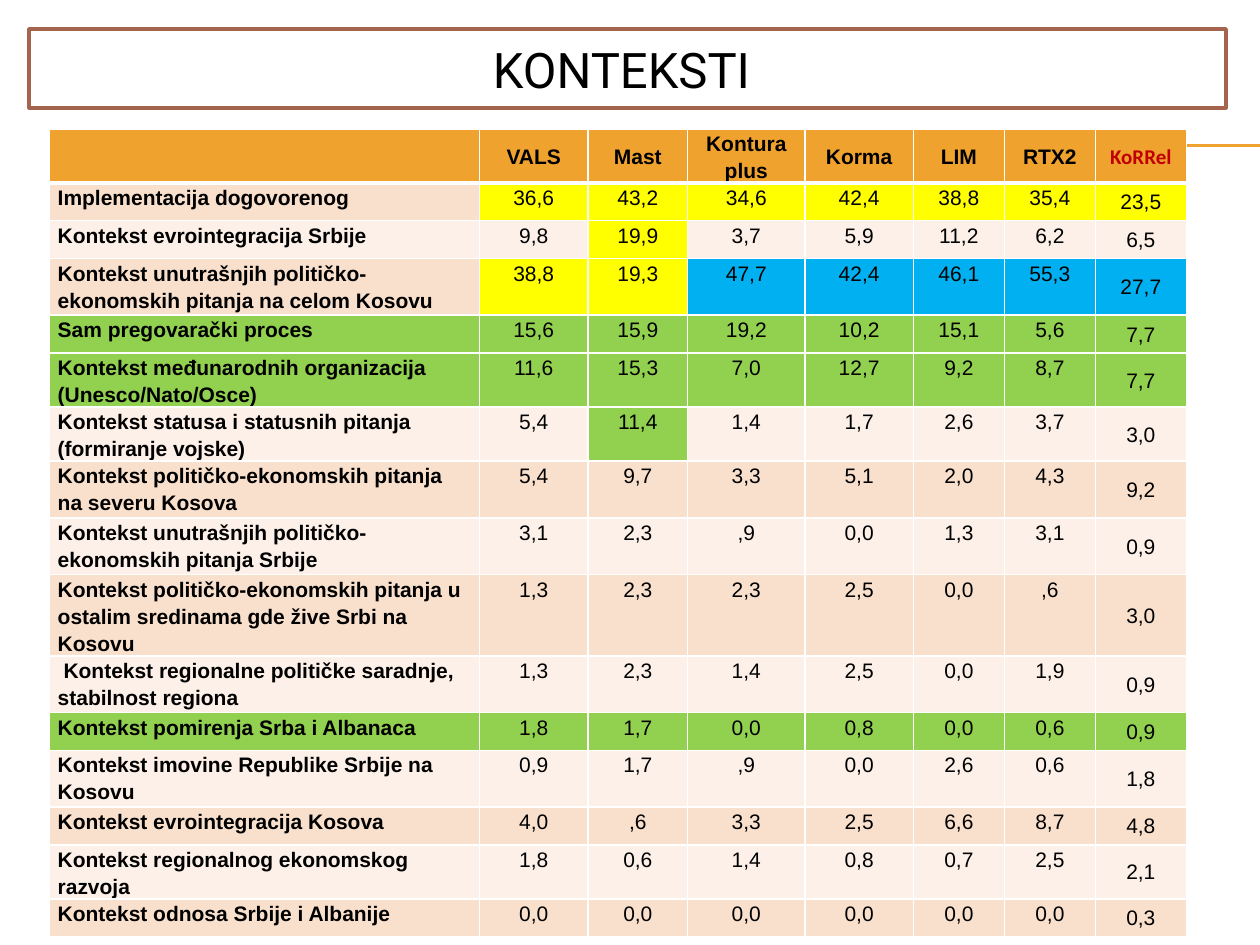
import lxml.etree
import pptx
import pptx.dml.color
import pptx.enum.shapes
import pptx.enum.text
import pptx.oxml.ns
import pptx.util

Pt = pptx.util.Pt
RGB = pptx.dml.color.RGBColor
PP_ALIGN = pptx.enum.text.PP_ALIGN
ANCHOR = pptx.enum.text.MSO_ANCHOR
qn = pptx.oxml.ns.qn

BLACK = RGB(0x00, 0x00, 0x00)
WHITE = RGB(0xFF, 0xFF, 0xFF)
ORANGE = RGB(0xF0, 0xA2, 0x2E)
BROWN = RGB(0xA5, 0x64, 0x4E)
RED = RGB(0xC0, 0x00, 0x00)
BAND_DARK = RGB(0xF9, 0xE0, 0xCD)
BAND_LIGHT = RGB(0xFC, 0xF0, 0xE8)
HIGHLIGHTS = {
    "Y": RGB(0xFF, 0xFF, 0x00),
    "B": RGB(0x00, 0xB0, 0xF0),
    "G": RGB(0x92, 0xD0, 0x50),
}

# Row heights by how the label wraps
ONE, TIGHT, TWO, THREE = 21.6, 30.8, 32.4, 46.2
HEAD = 30.3
COLUMNS = [246, 62, 57, 67, 62, 52, 52, 52]
MEDIA = ["VALS", "Mast", "Kontura plus", "Korma", "LIM", "RTX2", "KoRRel"]

# Label, values, height, highlight of each cell ("." is the plain band)
CONTEXTS = [
    ("Implementacija dogovorenog",
     "36,6 43,2 34,6 42,4 38,8 35,4 23,5", ONE, ".YYYYYYY"),
    ("Kontekst evrointegracija Srbije",
     "9,8 19,9 3,7 5,9 11,2 6,2 6,5", ONE, "..Y....."),
    ("Kontekst unutrašnjih političko-ekonomskih pitanja na celom Kosovu",
     "38,8 19,3 47,7 42,4 46,1 55,3 27,7", TWO, ".YYBBBBB"),
    ("Sam pregovarački proces",
     "15,6 15,9 19,2 10,2 15,1 5,6 7,7", ONE, "GGGGGGGG"),
    ("Kontekst međunarodnih organizacija (Unesco/Nato/Osce)",
     "11,6 15,3 7,0 12,7 9,2 8,7 7,7", TIGHT, "GGGGGGGG"),
    ("Kontekst statusa i statusnih pitanja (formiranje vojske)",
     "5,4 11,4 1,4 1,7 2,6 3,7 3,0", TIGHT, "..G....."),
    ("Kontekst političko-ekonomskih pitanja na severu Kosova",
     "5,4 9,7 3,3 5,1 2,0 4,3 9,2", TWO, "........"),
    ("Kontekst unutrašnjih političko-ekonomskih pitanja Srbije",
     "3,1 2,3 ,9 0,0 1,3 3,1 0,9", TWO, "........"),
    ("Kontekst političko-ekonomskih pitanja u ostalim sredinama gde žive "
     "Srbi na Kosovu",
     "1,3 2,3 2,3 2,5 0,0 ,6 3,0", THREE, "........"),
    (" Kontekst regionalne političke saradnje, stabilnost regiona",
     "1,3 2,3 1,4 2,5 0,0 1,9 0,9", TWO, "........"),
    ("Kontekst pomirenja Srba i Albanaca",
     "1,8 1,7 0,0 0,8 0,0 0,6 0,9", ONE, "GGGGGGGG"),
    ("Kontekst imovine Republike Srbije na Kosovu",
     "0,9 1,7 ,9 0,0 2,6 0,6 1,8", TWO, "........"),
    ("Kontekst evrointegracija Kosova",
     "4,0 ,6 3,3 2,5 6,6 8,7 4,8", ONE, "........"),
    ("Kontekst regionalnog ekonomskog razvoja",
     "1,8 0,6 1,4 0,8 0,7 2,5 2,1", TIGHT, "........"),
    ("Kontekst odnosa Srbije i Albanije",
     "0,0 0,0 0,0 0,0 0,0 0,0 0,3", ONE, "........"),
]


class Deck:
    """Holds the text style and the current slide."""

    font = "Arial"
    size = 12

    def __init__(self, width, height):
        self.prs = pptx.Presentation()
        self.prs.slide_width, self.prs.slide_height = Pt(width), Pt(height)
        self.s = self.prs.slides.add_slide(self.prs.slide_layouts[6])

    def run(self, p, text, font=None, size=None, color=BLACK, bold=False):
        r = p.add_run()
        r.text = text
        r.font.name = font or self.font
        r.font.size = Pt(size or self.size)
        r.font.bold = bold
        r.font.color.rgb = color

    def line(self, x1, y1, x2, y2, color, width):
        c = self.s.shapes.add_connector(
            pptx.enum.shapes.MSO_CONNECTOR.STRAIGHT,
            Pt(x1), Pt(y1), Pt(x2), Pt(y2))
        c.line.color.rgb = color
        c.line.width = Pt(width)
        lxml.etree.SubElement(c._element.spPr, qn("a:effectLst"))

    def title_box(self, x, y, w, h, text):
        sp = self.s.shapes.add_shape(
            pptx.enum.shapes.MSO_SHAPE.RECTANGLE, Pt(x), Pt(y), Pt(w), Pt(h))
        sp.shadow.inherit = False
        sp.fill.solid()
        sp.fill.fore_color.rgb = WHITE
        sp.line.color.rgb = BROWN
        sp.line.width = Pt(2)
        tf = sp.text_frame
        tf.word_wrap = True
        tf.vertical_anchor = ANCHOR.MIDDLE
        p = tf.paragraphs[0]
        p.alignment = PP_ALIGN.CENTER
        self.run(p, text, "Roboto", 28)

    def table(self, x, y, widths, heights):
        t = self.s.shapes.add_table(
            len(heights), len(widths), Pt(x), Pt(y),
            Pt(sum(widths)), Pt(sum(heights))).table
        for col, w in zip(t.columns, widths):
            col.width = Pt(w)
        for row, h in zip(t.rows, heights):
            row.height = Pt(h)
        return t

    def borders(self, cell, bottom):
        tcPr = cell._tc.get_or_add_tcPr()
        sides = [("L", 1), ("R", 1), ("T", 1), ("B", bottom)]
        for i, (side, width) in enumerate(sides):
            ln = lxml.etree.Element(qn("a:ln" + side), w=str(Pt(width)))
            fill = lxml.etree.SubElement(ln, qn("a:solidFill"))
            lxml.etree.SubElement(fill, qn("a:srgbClr"), val=str(WHITE))
            tcPr.insert(i, ln)

    def cell(self, cell, text, fill, align=PP_ALIGN.CENTER, middle=False,
             side=5, top=0, spacing=1.15, bottom=1, **style):
        cell.fill.solid()
        cell.fill.fore_color.rgb = fill
        self.borders(cell, bottom)
        cell.margin_left = cell.margin_right = Pt(side)
        cell.margin_top, cell.margin_bottom = Pt(top), Pt(0)
        cell.vertical_anchor = ANCHOR.MIDDLE if middle else ANCHOR.TOP
        p = cell.text_frame.paragraphs[0]
        p.alignment = align
        p.line_spacing = spacing
        if text:
            self.run(p, text, **style)


def main():
    d = Deck(720, 540)

    # Double rule behind the table
    for y in (82.8, 83.5):
        d.line(40, y, 720, y, ORANGE, 0.75)

    # Title
    d.title_box(16.6, 16.6, 684, 45, "KONTEKSTI ")

    # Table header
    t = d.table(28, 73.6, COLUMNS, [HEAD] + [c[2] for c in CONTEXTS])
    last = len(MEDIA)
    for j, name in enumerate([""] + MEDIA):
        accent = {"font": "Calibri", "color": RED} if j == last else {}
        d.cell(t.cell(0, j), name, ORANGE, middle=True, bottom=3,
               bold=True, **accent)

    # Table body
    for i, (label, values, _, marks) in enumerate(CONTEXTS, 1):
        band = BAND_DARK if i % 2 else BAND_LIGHT
        for j, text in enumerate([label] + values.split()):
            style = {}
            if j == 0:
                style = {"align": PP_ALIGN.LEFT, "bold": True}
            elif j == last:
                style = {"middle": True, "side": 0.7, "top": 0.7, "spacing": 1.0}
            d.cell(t.cell(i, j), text, HIGHLIGHTS.get(marks[j], band), **style)

    d.prs.save("out.pptx")


if __name__ == "__main__":
    main()
